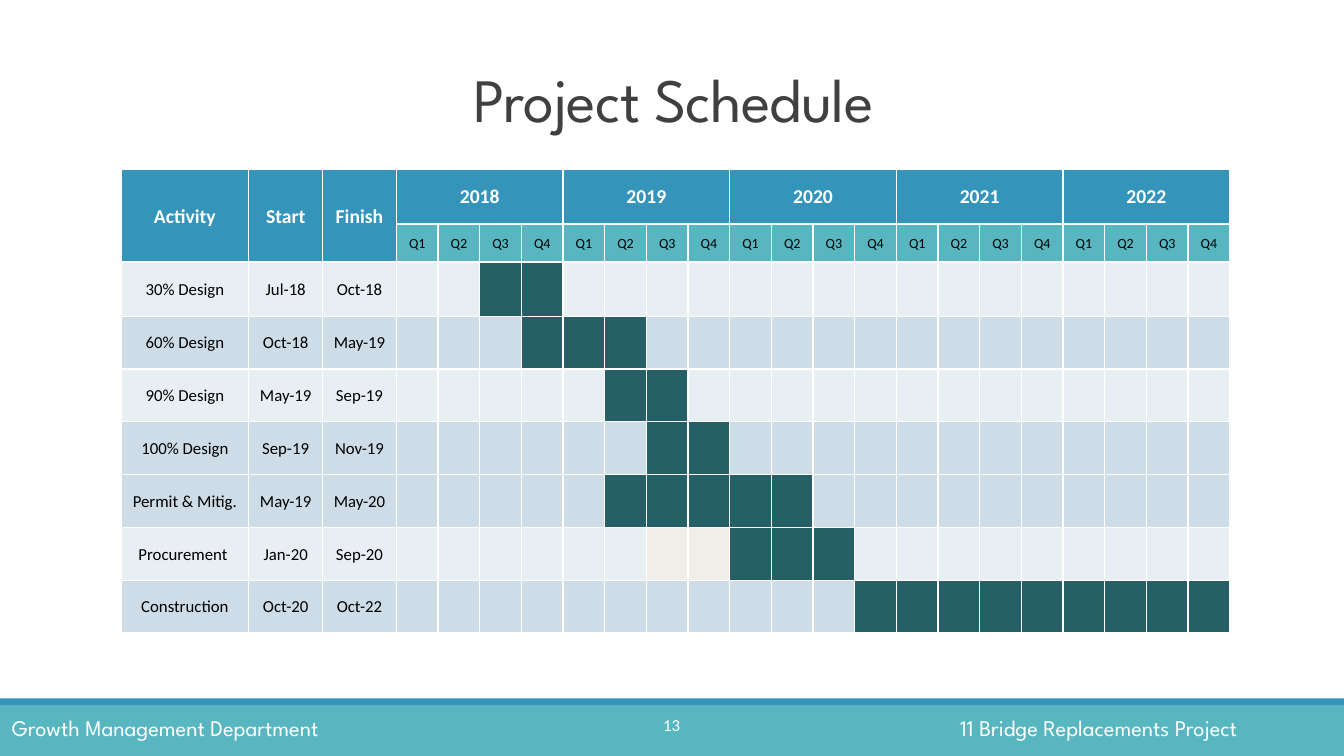
import pptx
import pptx.util
import pptx.dml.color
import pptx.enum.shapes
import pptx.enum.text
import pptx.oxml
import pptx.oxml.ns

Cm = pptx.util.Cm
Pt = pptx.util.Pt
RGBColor = pptx.dml.color.RGBColor
PP_ALIGN = pptx.enum.text.PP_ALIGN
MSO_ANCHOR = pptx.enum.text.MSO_ANCHOR

WHITE = RGBColor(0xFF, 0xFF, 0xFF)
BLACK = RGBColor(0x00, 0x00, 0x00)
GRAY = RGBColor(0x40, 0x40, 0x40)
BLUE = RGBColor(0x34, 0x94, 0xBA)
TEAL = RGBColor(0x58, 0xB6, 0xC0)
DARK_TEAL = RGBColor(0x26, 0x60, 0x66)
PALE = RGBColor(0xE8, 0xEF, 0xF3)
MIST = RGBColor(0xCD, 0xDC, 0xE7)
CREAM = RGBColor(0xF1, 0xEE, 0xE7)


def write(para, text, size, font, color, bold=False, align=PP_ALIGN.CENTER):
    para.alignment = align
    span = para.add_run()
    span.text = text
    span.font.size = Pt(size)
    span.font.name = font
    span.font.color.rgb = color
    span.font.bold = bold
    return span


def style_cell(cell, color, top=1, bottom=1):
    cell.margin_left = cell.margin_right = cell.margin_top = Cm(0.03)
    cell.margin_bottom = 0
    cell.vertical_anchor = MSO_ANCHOR.MIDDLE
    properties = cell._tc.get_or_add_tcPr()
    for side, width in (("L", 1), ("R", 1), ("T", top), ("B", bottom)):
        properties.append(pptx.oxml.parse_xml(
            f'<a:ln{side} {pptx.oxml.ns.nsdecls("a")} w="{Pt(width)}">'
            f'<a:solidFill><a:srgbClr val="{WHITE}"/></a:solidFill></a:ln{side}>'))
    cell.fill.solid()
    cell.fill.fore_color.rgb = color


deck = pptx.Presentation()
deck.slide_width = Cm(33.87)
deck.slide_height = Cm(19.05)
page = deck.slides.add_slide(deck.slide_layouts[5])

for top, height, color in ((17.78, 1.27, TEAL), (17.6, 0.18, BLUE)):
    band = page.shapes.add_shape(
        pptx.enum.shapes.MSO_SHAPE.RECTANGLE, 0, Cm(top), deck.slide_width, Cm(height))
    band.shadow.inherit = False
    band.fill.solid()
    band.fill.fore_color.rgb = color
    band.line.fill.background()

title = page.shapes.title
title.left, title.top, title.width, title.height = Cm(3), Cm(0.97), Cm(27.94), Cm(3.3)
title.text_frame.vertical_anchor = MSO_ANCHOR.MIDDLE
title.text_frame.auto_size = pptx.enum.text.MSO_AUTO_SIZE.NONE
heading = title.text_frame.paragraphs[0]
heading.line_spacing = 0.85
span = write(heading, "Project Schedule", 44, "League Spartan", GRAY)
span._r.get_or_add_rPr().set("spc", "-50")

footers = (
    ("11 Bridge Replacements Project", 23.95, 9.32, 16, "League Spartan", PP_ALIGN.LEFT),
    ("13", 15.11, 3.63, 12, "Calibri", PP_ALIGN.CENTER),
    ("Growth Management Department", 0.05, 10.11, 16, "League Spartan", PP_ALIGN.LEFT),
)
for text, left, width, size, font, align in footers:
    box = page.shapes.add_textbox(Cm(left), Cm(17.88), Cm(width), Cm(0.94))
    box.text_frame.word_wrap = True
    write(box.text_frame.paragraphs[0], text, size, font, WHITE, align=align)

labels = ("Activity", "Start", "Finish")
years = ("2018", "2019", "2020", "2021", "2022")
activities = (
    ("30% Design", "Jul-18", "Oct-18", PALE, 2, 3),
    ("60% Design", "Oct-18", "May-19", MIST, 3, 5),
    ("90% Design", "May-19", "Sep-19", PALE, 5, 6),
    ("100% Design", "Sep-19", "Nov-19", MIST, 6, 7),
    ("Permit & Mitig.", "May-19", "May-20", MIST, 5, 9),
    ("Procurement ", "Jan-20", "Sep-20", PALE, 8, 10),
    ("Construction", "Oct-20", "Oct-22", MIST, 11, 19),
)
quarters = 4 * len(years)
column_widths = [3.22, 1.86, 1.86] + [1.05] * quarters
row_heights = [1.37, 0.96, 1.37] + [1.33] * 6

frame = page.shapes.add_table(
    len(row_heights), len(column_widths), Cm(3.05), Cm(4.27),
    Cm(sum(column_widths)), Cm(sum(row_heights)))
schedule = frame.table
schedule.first_row = False
schedule.horz_banding = False
for column, width in zip(schedule.columns, column_widths):
    column.width = Cm(width)
for row, height in zip(schedule.rows, row_heights):
    row.height = Cm(height)

for index, label in enumerate(labels):
    for row in range(2):
        style_cell(schedule.cell(row, index), BLUE, bottom=1.5)
    schedule.cell(0, index).merge(schedule.cell(1, index))
    write(schedule.cell(0, index).text_frame.paragraphs[0], label, 14, "Calibri", WHITE, True)

for quarter in range(quarters):
    column = len(labels) + quarter
    style_cell(schedule.cell(0, column), BLUE, bottom=1.5)
    cell = schedule.cell(1, column)
    style_cell(cell, TEAL, top=1.5)
    write(cell.text_frame.paragraphs[0], f"Q{quarter % 4 + 1}", 10, "Calibri", BLACK)

for index, year in enumerate(years):
    column = len(labels) + 4 * index
    cell = schedule.cell(0, column)
    cell.merge(schedule.cell(0, column + 3))
    write(cell.text_frame.paragraphs[0], year, 14, "Calibri", WHITE, True)

for row, (*texts, shade, first, last) in enumerate(activities, 2):
    for column, text in enumerate(texts):
        cell = schedule.cell(row, column)
        style_cell(cell, shade, top=1.5 if row == 2 else 1)
        write(cell.text_frame.paragraphs[0], text, 12, "Calibri", BLACK)
    for quarter in range(quarters):
        color = DARK_TEAL if first <= quarter <= last else shade
        if texts[0] == "Procurement " and quarter in (6, 7):
            color = CREAM
        style_cell(schedule.cell(row, len(labels) + quarter), color)

deck.save("out.pptx")
